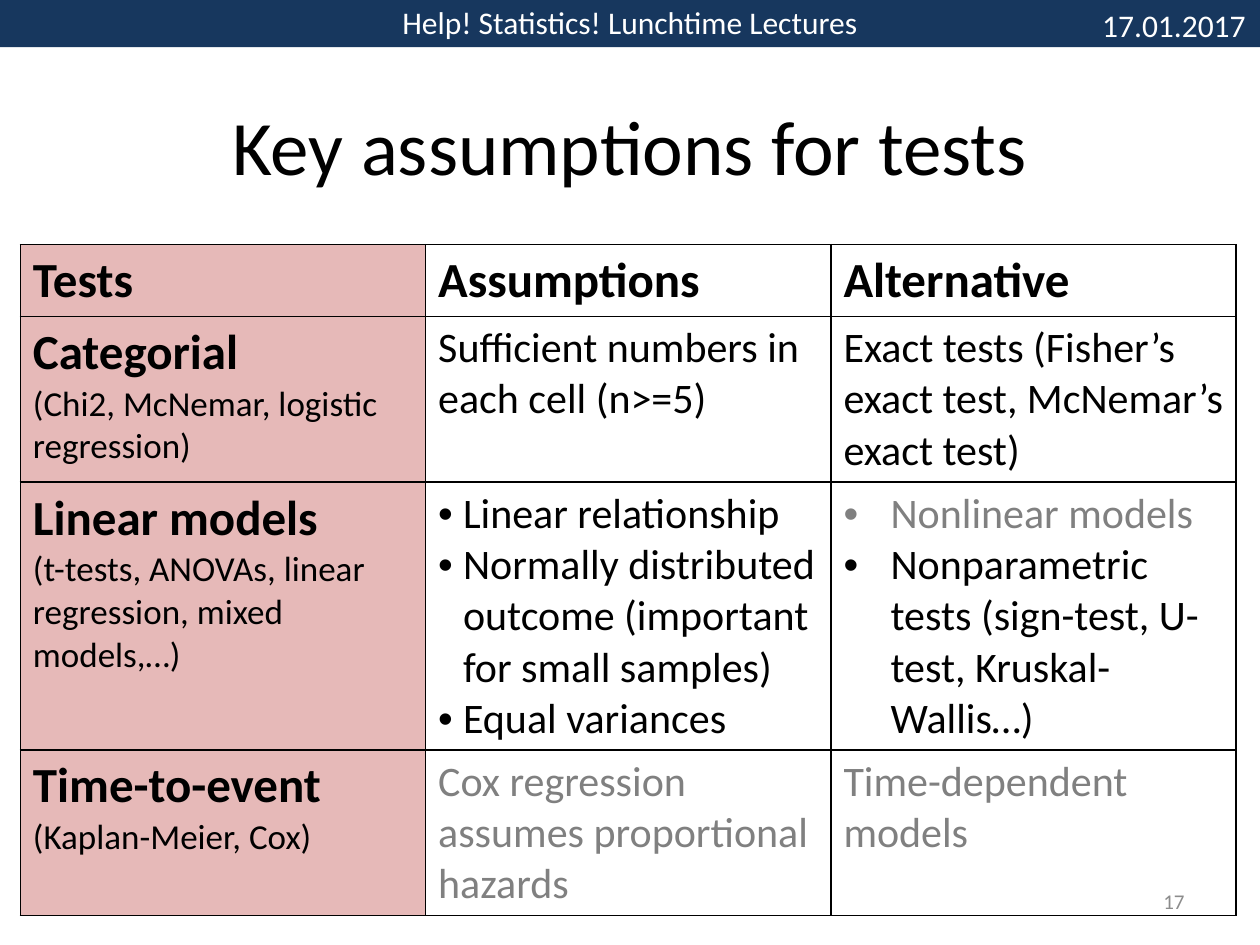
from dataclasses import dataclass

from lxml import etree
from pptx import Presentation, util as u
from pptx.dml.color import RGBColor
from pptx.enum import shapes, text
from pptx.oxml.ns import qn

Cm, Pt = u.Cm, u.Pt

NAVY = RGBColor(0x17, 0x37, 0x5E)
PINK = RGBColor(0xE6, 0xB9, 0xB8)
WHITE = RGBColor(0xFF, 0xFF, 0xFF)
BLACK = RGBColor(0, 0, 0)
GREY = RGBColor(0x80, 0x80, 0x80)
PALE_GREY = RGBColor(0x8C, 0x8C, 0x8C)

LEFT, CENTER, RIGHT = text.PP_ALIGN.LEFT, text.PP_ALIGN.CENTER, text.PP_ALIGN.RIGHT
TOP, MIDDLE = text.MSO_ANCHOR.TOP, text.MSO_ANCHOR.MIDDLE


@dataclass
class Line:
    """One paragraph of a table cell; hang is the bullet indent in cm."""
    words: str
    size: int = 24
    bold: bool = False
    color: RGBColor = BLACK
    hang: float = 0


def heading(words):
    return Line(words, 28, True)


def detail(words):
    return Line(words, 20)


COLUMN_WIDTH = 8.17
ROW_HEIGHTS = [1.45, 3.34, 5.4, 3.34]
ROWS = [
    [[heading("Tests")], [heading("Assumptions")], [heading("Alternative")]],
    [
        [heading("Categorial"), detail("(Chi2, McNemar, logistic regression)")],
        [Line("Sufficient numbers in each cell (n>=5)")],
        [Line("Exact tests (Fisher’s exact test, McNemar’s exact test)")],
    ],
    [
        [heading("Linear models"),
         detail("(t-tests, ANOVAs, linear regression, mixed models,…)")],
        [Line("Linear relationship", hang=0.5),
         Line("Normally distributed outcome (important for small samples)", hang=0.5),
         Line("Equal variances", hang=0.5)],
        [Line("Nonlinear models", color=GREY, hang=0.95),
         Line("Nonparametric tests (sign-test, U- test, Kruskal-Wallis…)", hang=0.95)],
    ],
    [
        [heading("Time-to-event"), detail("(Kaplan-Meier, Cox)")],
        [Line("Cox regression assumes proportional hazards", color=GREY)],
        [Line("Time-dependent models", color=GREY)],
    ],
]


class Painter:
    font = "Calibri"

    def __init__(self, page):
        self.page = page

    def set_words(self, para, words, size, color, bold=False):
        para.text = words
        for span in para.runs:
            span.font.name = self.font
            span.font.size = Pt(size)
            span.font.bold = bold
            span.font.color.rgb = color

    def fill_frame(self, frame, words, size, color, align, anchor, wrap=True):
        frame.word_wrap = wrap
        frame.vertical_anchor = anchor
        para = frame.paragraphs[0]
        para.alignment = align
        self.set_words(para, words, size, color)

    def banner(self, left, top, width, height, words):
        box = self.page.shapes.add_shape(
            shapes.MSO_SHAPE.RECTANGLE, Cm(left), Cm(top), Cm(width), Cm(height))
        box.shadow.inherit = False
        box.fill.solid()
        box.fill.fore_color.rgb = NAVY
        box.line.fill.background()
        self.fill_frame(box.text_frame, words, 18, WHITE, CENTER, MIDDLE)

    def label(self, left, top, width, height, words, size, color, align, anchor, wrap=True):
        box = self.page.shapes.add_textbox(Cm(left), Cm(top), Cm(width), Cm(height))
        self.fill_frame(box.text_frame, words, size, color, align, anchor, wrap)

    def bullet(self, para, hang):
        props = para._p.get_or_add_pPr()
        props.set("marL", str(Cm(hang)))
        props.set("indent", str(-Cm(hang)))
        etree.SubElement(props, qn("a:buFont"), typeface="Arial")
        etree.SubElement(props, qn("a:buChar"), char="•")

    def border(self, cell):
        """Draw a black 1 pt line on all four sides of the cell."""
        props = cell._tc.get_or_add_tcPr()
        for side in ("a:lnL", "a:lnR", "a:lnT", "a:lnB"):
            line = etree.SubElement(props, qn(side), w=str(Pt(1)))
            fill = etree.SubElement(line, qn("a:solidFill"))
            etree.SubElement(fill, qn("a:srgbClr"), val=str(BLACK))

    def cell(self, cell, lines, color):
        self.border(cell)
        cell.fill.solid()
        cell.fill.fore_color.rgb = color
        frame = cell.text_frame
        for index, line in enumerate(lines):
            para = frame.add_paragraph() if index else frame.paragraphs[0]
            self.set_words(para, line.words, line.size, line.color, line.bold)
            if line.hang:
                self.bullet(para, line.hang)

    def table(self, left, top, column_width, heights, rows):
        count = len(rows[0])
        table = self.page.shapes.add_table(
            len(rows), count, Cm(left), Cm(top),
            Cm(column_width * count), Cm(sum(heights))).table
        for column in table.columns:
            column.width = Cm(column_width)
        for r, (height, row) in enumerate(zip(heights, rows)):
            table.rows[r].height = Cm(height)
            for c, lines in enumerate(row):
                self.cell(table.cell(r, c), lines, WHITE if c else PINK)


def main():
    deck = Presentation()
    deck.slide_width, deck.slide_height = Cm(25.4), Cm(19.05)
    painter = Painter(deck.slides.add_slide(deck.slide_layouts[6]))

    painter.banner(0, -0.08, 25.4, 1.03, "Help! Statistics! Lunchtime Lectures")
    painter.label(21.97, 0, 3.43, 1.03, "17.01.2017", 18, WHITE, LEFT, TOP, wrap=False)
    painter.label(1.27, 1.32, 22.86, 3.18, "Key assumptions for tests",
                  44, BLACK, CENTER, MIDDLE)
    painter.table(0.41, 4.93, COLUMN_WIDTH, ROW_HEIGHTS, ROWS)
    painter.label(18.2, 17.66, 5.93, 1.01, "17", 12, PALE_GREY, RIGHT, MIDDLE)

    deck.save("out.pptx")


if __name__ == "__main__":
    main()
